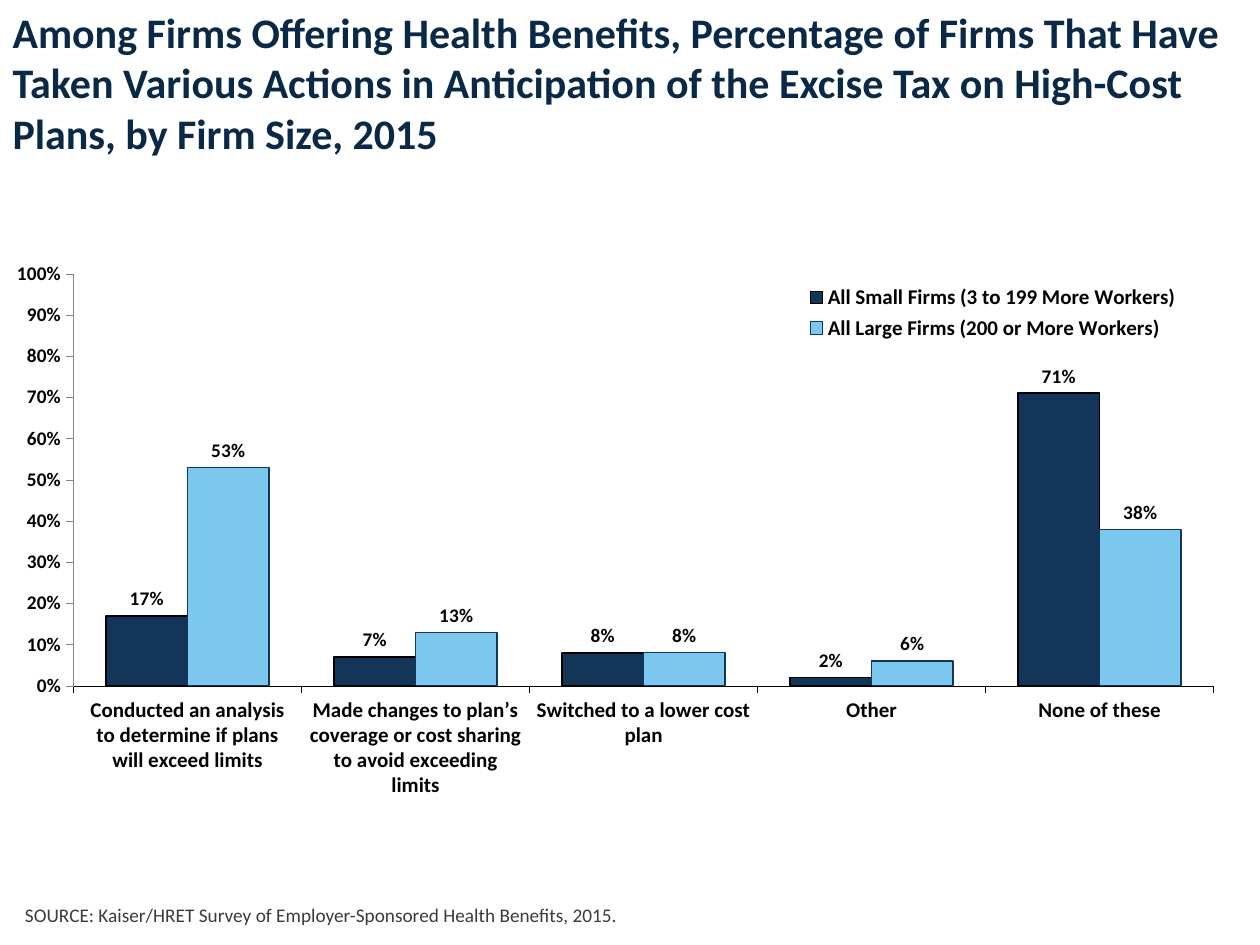
from lxml.etree import SubElement
from pptx import Presentation
from pptx.chart.data import CategoryChartData as Data
from pptx.dml.color import RGBColor
from pptx.enum.chart import XL_CHART_TYPE as Kind, XL_LABEL_POSITION as Spot
from pptx.enum.chart import XL_LEGEND_POSITION as Side, XL_TICK_MARK as Tick
from pptx.enum.text import MSO_ANCHOR as Anchor, PP_ALIGN as Align
from pptx.oxml.ns import qn
from pptx.util import Inches, Pt

FACE = "Calibri"
NAVY = RGBColor(0x09, 0x29, 0x47)
DARK = RGBColor(0x13, 0x35, 0x59)
SKY = RGBColor(0x7B, 0xC7, 0xED)
GREY = RGBColor(0x3C, 0x3A, 0x3B)
AXIS = RGBColor(0x86, 0x86, 0x86)
BLACK = RGBColor(0, 0, 0)


def write(shape, text, size, color, bold=False, anchor=Anchor.TOP):
    frame = shape.text_frame
    frame.word_wrap = True
    frame.vertical_anchor = anchor
    frame.text = text
    para = frame.paragraphs[0]
    para.alignment = Align.LEFT
    font = para.font
    font.name, font.size, font.bold = FACE, Pt(size), bold
    font.color.rgb = color


def place(parent, index, box, inner=False):
    for old in parent.findall(qn("c:layout")):
        parent.remove(old)
    layout = SubElement(parent, qn("c:layout"))
    parent.insert(index, layout)
    manual = SubElement(layout, qn("c:manualLayout"))
    rules = [("layoutTarget", "inner")] if inner else []
    rules += [("xMode", "edge"), ("yMode", "edge"), *zip("xywh", box)]
    for tag, val in rules:
        SubElement(manual, qn("c:" + tag)).set("val", str(val))


deck = Presentation()
deck.slide_width, deck.slide_height = Inches(10), Inches(7.5)
W, H = deck.slide_width, deck.slide_height
slide = deck.slides.add_slide(deck.slide_layouts[5])

title = slide.shapes.title
title.left, title.top = 0, 0
title.width, title.height = int(W * 0.98), Inches(0.65)
write(title, "Among Firms Offering Health Benefits, Percentage of Firms That Have "
      "Taken Various Actions in Anticipation of the Excise Tax on High-Cost Plans, "
      "by Firm Size, 2015", 24, NAVY, bold=True)

note = slide.shapes.add_textbox(int(W * 0.01), Inches(6.5), int(W * 0.91), Inches(0.9))
write(note, "SOURCE: Kaiser/HRET Survey of Employer-Sponsored Health Benefits, 2015.",
      11, GREY, anchor=Anchor.BOTTOM)

firms = [
    ("All Small Firms (3 to 199 More Workers)", (0.17, 0.07, 0.08, 0.02, 0.71), DARK, BLACK, 1),
    ("All Large Firms (200 or More Workers)", (0.53, 0.13, 0.08, 0.06, 0.38), SKY, DARK, 0.75),
]
data = Data(number_format="0%")
data.categories = [
    "Conducted an analysis to determine if plans will exceed limits",
    "Made changes to plan’s coverage or cost sharing to avoid exceeding limits",
    "Switched to a lower cost plan",
    "Other",
    "None of these",
]
for name, vals, *_ in firms:
    data.add_series(name, vals)

chart = slide.shapes.add_chart(Kind.COLUMN_CLUSTERED, 0, Inches(2.04),
                               Inches(9.73), Inches(4.42), data).chart
chart.has_title = False
chart.font.name, chart.font.size, chart.font.bold = FACE, Pt(11), True
chart.font.color.rgb = BLACK

plot = chart.plots[0]
plot.gap_width, plot.overlap, plot.vary_by_categories = 80, 0, False
for bars, (_, _, fill, edge, width) in zip(plot.series, firms):
    bars.format.fill.solid()
    bars.format.fill.fore_color.rgb = fill
    bars.format.line.color.rgb = edge
    bars.format.line.width = Pt(width)
    tags = bars.data_labels
    tags.show_value = True
    tags.number_format, tags.number_format_is_linked = "0%", False
    tags.position = Spot.OUTSIDE_END

cats, pct = chart.category_axis, chart.value_axis
for axis, size, color in ((cats, 12, BLACK), (pct, 11, AXIS)):
    axis.has_major_gridlines = False
    axis.major_tick_mark, axis.minor_tick_mark = Tick.OUTSIDE, Tick.NONE
    axis.tick_labels.font.size = Pt(size)
    axis.format.line.color.rgb = color
    axis.format.line.width = Pt(0.25)
pct.minimum_scale, pct.maximum_scale, pct.major_unit = 0, 1, 0.1
pct.tick_labels.number_format = "0%"
pct.tick_labels.number_format_is_linked = False

chart.has_legend = True
key = chart.legend
key.position, key.include_in_layout = Side.RIGHT, False
key.font.size = Pt(12)
place(key._element, 1, (0.65, 0.04, 0.32, 0.12))
place(plot._element.getparent(), 0, (0.06, 0.03, 0.93, 0.74), inner=True)

deck.save("out.pptx")
